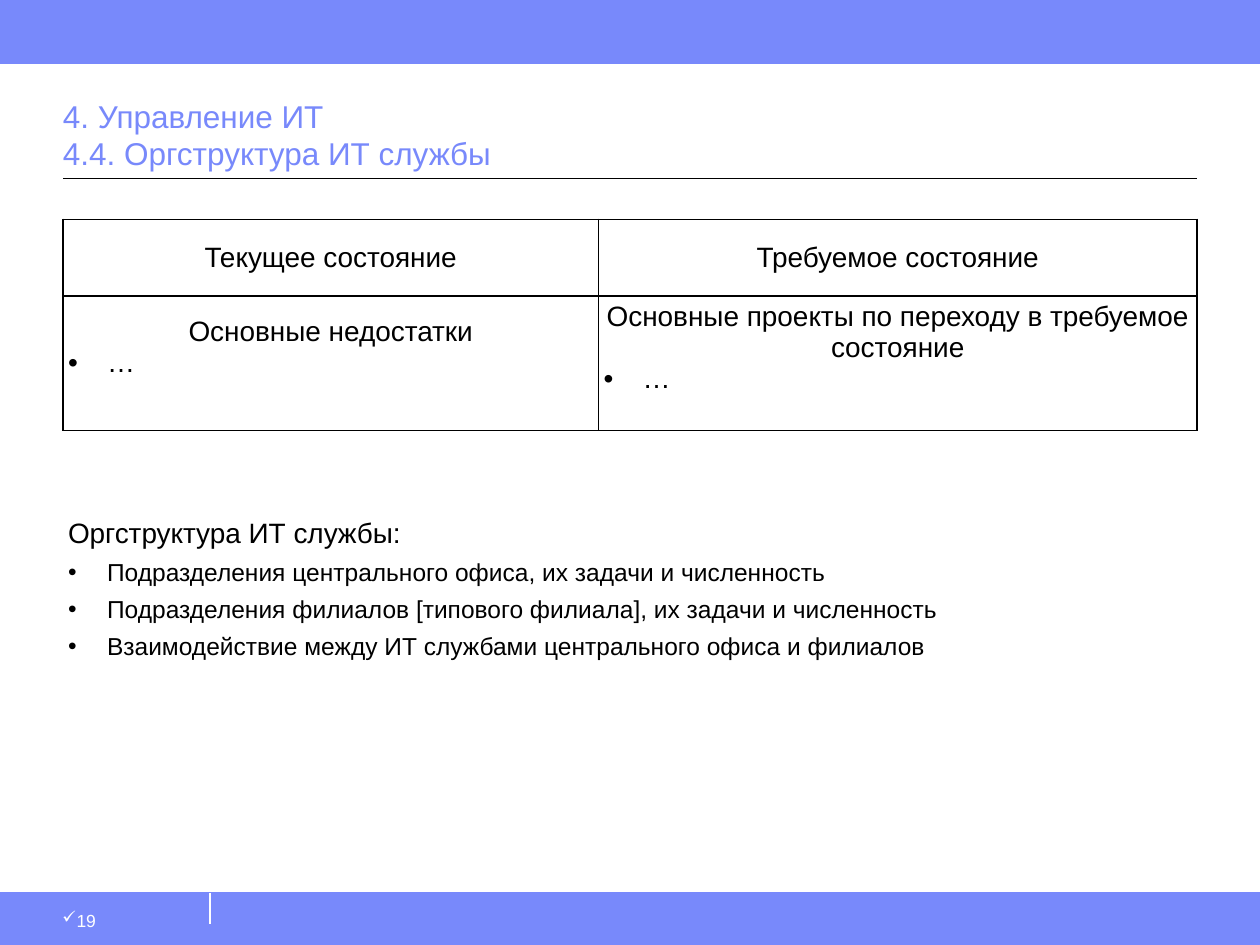
from lxml import etree
from pptx import Presentation
from pptx.dml.color import RGBColor
from pptx.enum.shapes import MSO_CONNECTOR, MSO_SHAPE
from pptx.enum.text import MSO_ANCHOR, PP_ALIGN
from pptx.oxml.ns import qn
from pptx.util import Inches, Pt

RECT = MSO_SHAPE.RECTANGLE
STRAIGHT = MSO_CONNECTOR.STRAIGHT
TOP, MIDDLE, BOTTOM = MSO_ANCHOR.TOP, MSO_ANCHOR.MIDDLE, MSO_ANCHOR.BOTTOM
CENTER = PP_ALIGN.CENTER

BLUE, BLACK, WHITE = "7889FB", "000000", "FFFFFF"
COLS, ROWS = 120, 90  # grid over the whole slide
LEFT, WIDTH = 6, 108  # content column


def rgb(value):
    return RGBColor.from_string(value)


class Deck:
    font = "Arial"
    indent = Inches(0.31)

    def __init__(self):
        self.prs = Presentation()
        self.prs.slide_width, self.prs.slide_height = Inches(10), Inches(7.5)
        self.s = self.prs.slides.add_slide(self.prs.slide_layouts[6])

    def x(self, cols):
        return round(self.prs.slide_width * cols / COLS)

    def y(self, rows):
        return round(self.prs.slide_height * rows / ROWS)

    def box(self, left, top, width, height):
        return self.x(left), self.y(top), self.x(width), self.y(height)

    def band(self, top, height):
        sp = self.s.shapes.add_shape(RECT, *self.box(0, top, COLS, height))
        sp.shadow.inherit = False
        sp.fill.solid()
        sp.fill.fore_color.rgb = sp.line.color.rgb = rgb(BLUE)
        sp.line.width = Pt(0.75)

    def line(self, x1, y1, x2, y2, color, width=0.75):
        c = self.s.shapes.add_connector(
            STRAIGHT, self.x(x1), self.y(y1), self.x(x2), self.y(y2))
        c.line.color.rgb = rgb(color)
        c.line.width = Pt(width)
        etree.SubElement(c._element.spPr, qn("a:effectLst"))

    def bullet(self, p, char, font, indent):
        pPr = p._p.get_or_add_pPr()
        pPr.set("marL", str(indent))
        pPr.set("indent", str(-indent))
        etree.SubElement(pPr, qn("a:buFont"), typeface=font)
        etree.SubElement(pPr, qn("a:buChar"), char=char)

    def paragraph(self, tf, text, size, color=BLACK, first=False):
        p = tf.paragraphs[0] if first else tf.add_paragraph()
        r = p.add_run()
        r.text = text
        r.font.name, r.font.size = self.font, Pt(size)
        r.font.color.rgb = rgb(color)
        return p

    def bullet_item(self, tf, text, size):
        p = self.paragraph(tf, text, size)
        self.bullet(p, "•", self.font, self.indent)
        return p

    def text_frame(self, box, margins, anchor=TOP):
        tf = self.s.shapes.add_textbox(*self.box(*box)).text_frame
        tf.word_wrap = True
        tf.vertical_anchor = anchor
        (tf.margin_left, tf.margin_top,
         tf.margin_right, tf.margin_bottom) = map(Inches, margins)
        return tf

    def cell(self, cell, heading, items, size=16):
        cell.fill.background()
        cell.vertical_anchor = MIDDLE
        cell.margin_left = cell.margin_right = Inches(0.04)
        cell.margin_top = 0
        # Lists keep one free line below them
        cell.margin_bottom = Inches(0.25 if items else 0)
        tf = cell.text_frame
        self.paragraph(tf, heading, size, first=True).alignment = CENTER
        for item in items:
            self.bullet_item(tf, item, size)
        # Borders precede the fill in the cell properties
        tcPr = cell._tc.get_or_add_tcPr()
        for i, side in enumerate(("lnL", "lnR", "lnT", "lnB")):
            ln = etree.Element(qn(f"a:{side}"), w=str(Pt(1)))
            fill = etree.SubElement(ln, qn("a:solidFill"))
            etree.SubElement(fill, qn("a:srgbClr"), val=BLACK)
            tcPr.insert(i, ln)

    def table(self, left, top, widths, heights, rows):
        box = self.box(left, top, sum(widths), sum(heights))
        t = self.s.shapes.add_table(len(heights), len(widths), *box).table
        t.first_row = t.horz_banding = False
        for col, width in zip(t.columns, widths):
            col.width = self.x(width)
        for row, height, contents in zip(t.rows, heights, rows):
            row.height = self.y(height)
            for cell, (heading, items) in zip(row.cells, contents):
                self.cell(cell, heading, items)


def main():
    d = Deck()

    # Header and footer bands with their rules
    d.band(85, 5)
    d.band(0, 6)
    d.line(20, 88, 20, 85, WHITE)
    for row in (5, 85):
        d.line(0, row, COLS, row, BLUE, 0.5)
    d.line(LEFT, 17, LEFT + WIDTH, 17, BLACK)

    # Page number with a check mark (Wingdings code for the tick)
    tf = d.text_frame((4, 85.8, 16, 4.2), (0.16, 0.07, 0.1, 0.05))
    p = d.paragraph(tf, "19", 10, WHITE, first=True)
    d.bullet(p, "ü", "Wingdings", 0)

    # Title
    tf = d.text_frame((LEFT, 6, WIDTH, 11), (0, 0.05, 0, 0.05), BOTTOM)
    d.paragraph(tf, "4. Управление ИТ", 18, BLUE, first=True)
    d.paragraph(tf, "4.4. Оргструктура ИТ службы", 18, BLUE)

    # Current and required state
    d.table(LEFT, 20.9, (51, 57), (7.3, 12.8), (
        (("Текущее состояние", ()), ("Требуемое состояние", ())),
        (("Основные недостатки", ("…",)),
         ("Основные проекты по переходу в требуемое состояние", ("…",))),
    ))

    # Structure of the IT service
    tf = d.text_frame((LEFT, 48, WIDTH, 29), (0.04,) * 4)
    p = d.paragraph(tf, "Оргструктура ИТ службы:", 16, first=True)
    p.line_spacing = 1.2
    for item in (
        "Подразделения центрального офиса, их задачи и численность",
        "Подразделения филиалов [типового филиала], их задачи и численность",
        "Взаимодействие между ИТ службами центрального офиса и филиалов",
    ):
        p = d.bullet_item(tf, item, 14)
        p.line_spacing = 1.2
        p.space_before = Pt(1)

    d.prs.save("out.pptx")


if __name__ == "__main__":
    main()
